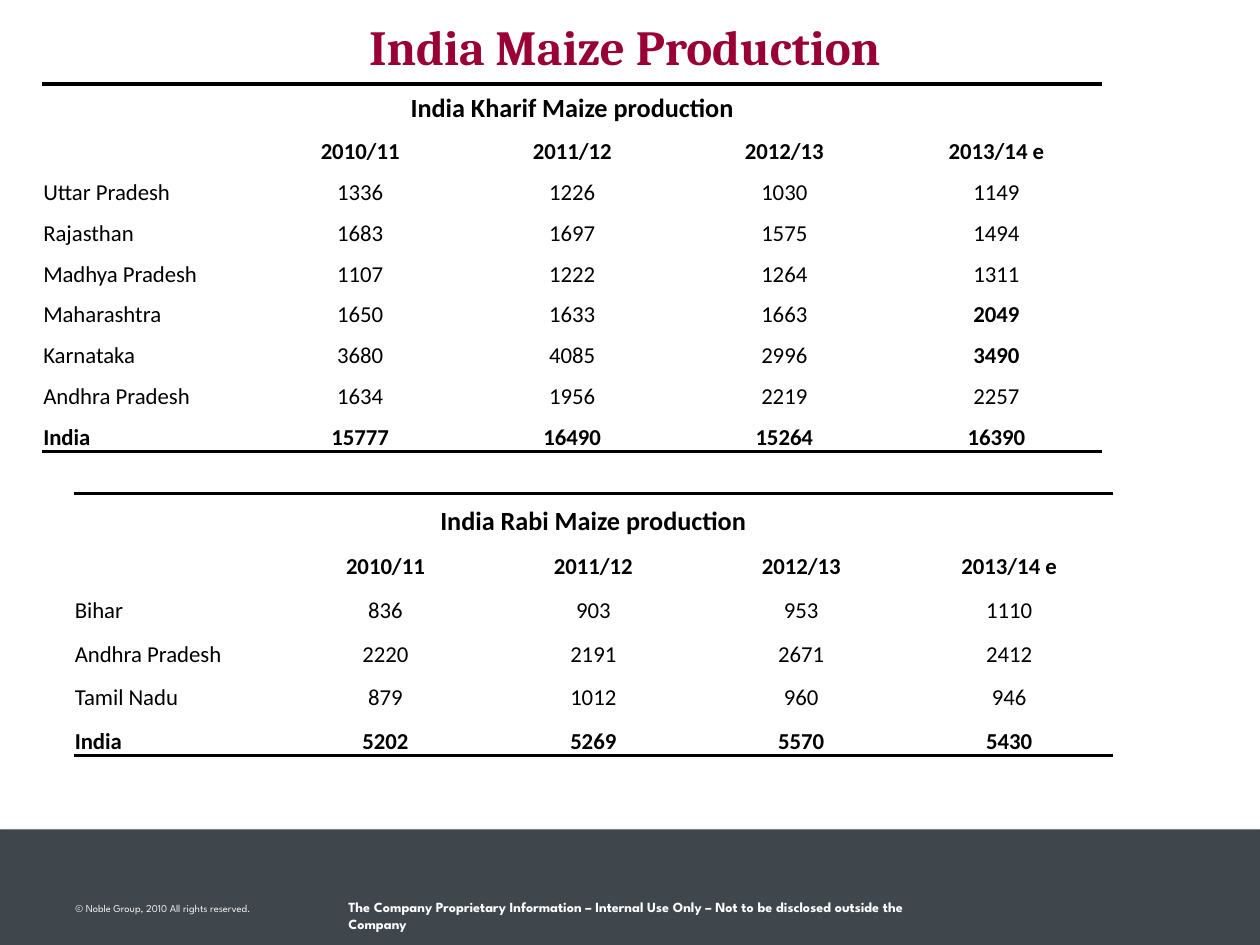
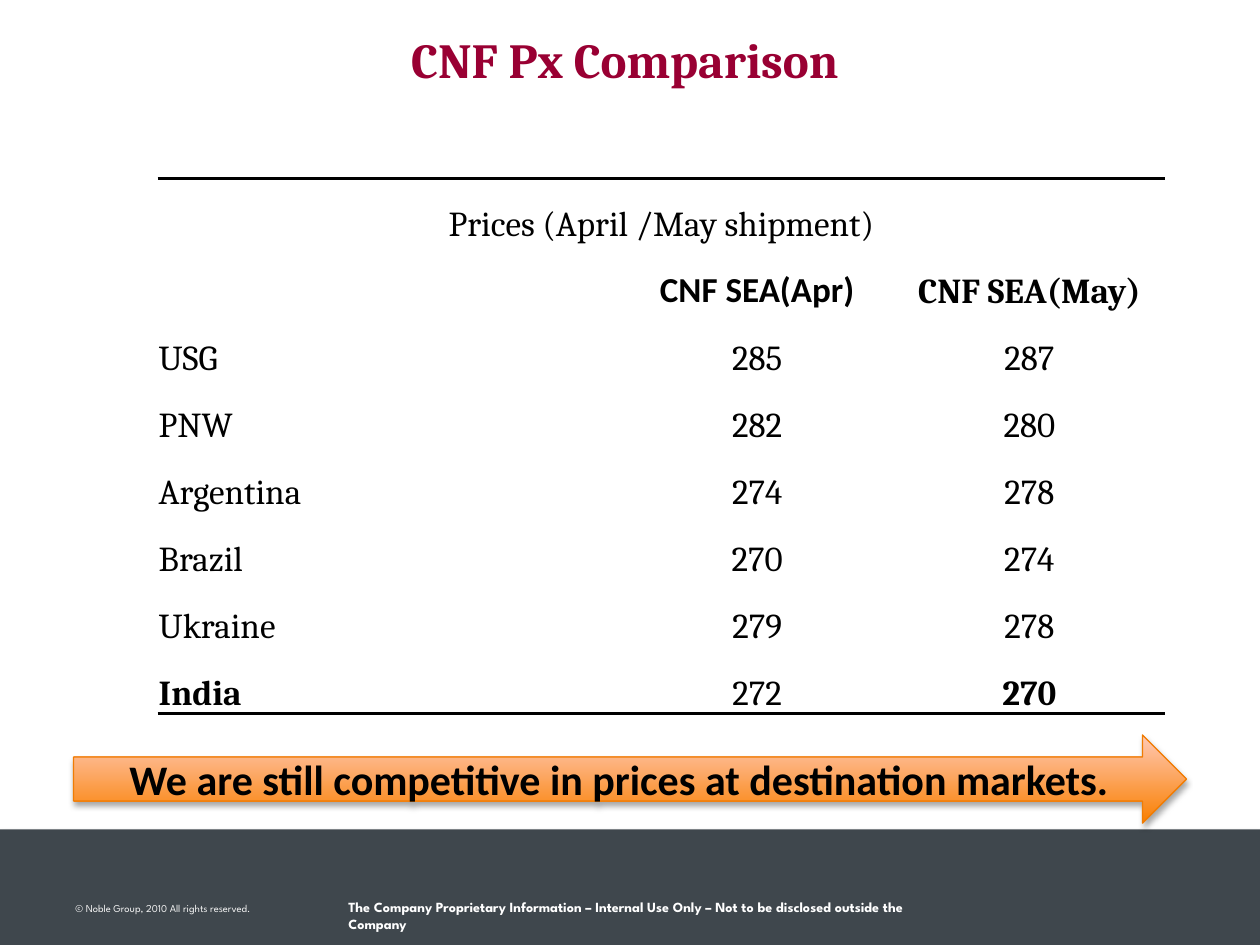
from dataclasses import dataclass

from lxml import etree
from pptx import Presentation
from pptx import util as u
from pptx.dml.color import RGBColor
from pptx.enum import shapes, text
from pptx.oxml import ns

COLUMNS, ROWS = 120, 90  # grid that all places and sizes refer to
BLACK, WHITE, SLATE, PALE = "000000", "FFFFFF", "3F474D", "F2F2F2"
CRIMSON, ORANGE, DEEP_ORANGE, PEACH = "990033", "F07C03", "F97F00", "FFC9B5"
BODY, SERIF, FOOTER = "Calibri", "Cambria", "League Spartan"
NO_STYLE = "{2D5ABB26-0587-4C30-8999-92F81FD0307C}"
LEFT, CENTER = text.PP_ALIGN.LEFT, text.PP_ALIGN.CENTER
TOP, MIDDLE, BOTTOM = (text.MSO_ANCHOR.TOP, text.MSO_ANCHOR.MIDDLE,
                       text.MSO_ANCHOR.BOTTOM)

prs = Presentation()
prs.slide_width, prs.slide_height = u.Inches(10), u.Inches(7.5)


@dataclass(frozen=True)
class Box:
    """A place on the grid: left, top, width and height."""
    x: float
    y: float
    w: float
    h: float

    def emu(self) -> tuple[int, ...]:
        col, row = prs.slide_width / COLUMNS, prs.slide_height / ROWS
        return (round(self.x * col), round(self.y * row),
                round(self.w * col), round(self.h * row))


@dataclass(frozen=True)
class DataTable:
    """A captioned table; bold holds (row, column) places in rows."""
    box: Box
    caption: str
    rows: list[tuple[str, ...]]
    bold: set[tuple[int, int]]
    shares: tuple[float, ...] = (0.2,) * 5
    caption_size: int = 15
    size: int = 13
    font: str = BODY
    caption_bold: bool = True
    other_fonts: tuple[tuple[tuple[int, int], str], ...] = ()


def rgb(hex_code: str) -> RGBColor:
    return RGBColor.from_string(hex_code)


def put_text(tf, content: str, *, size: float, font: str = BODY,
             color: str = BLACK, bold: bool = False, align=LEFT) -> None:
    p = tf.paragraphs[0]
    p.alignment = align
    r = p.add_run()
    r.text = content
    r.font.size, r.font.name, r.font.bold = u.Pt(size), font, bold
    r.font.color.rgb = rgb(color)


def add_label(s, box: Box, content: str, anchor=TOP, **style) -> None:
    tf = s.shapes.add_textbox(*box.emu()).text_frame
    tf.word_wrap = True
    tf.auto_size = text.MSO_AUTO_SIZE.SHAPE_TO_FIT_TEXT
    tf.vertical_anchor = anchor
    put_text(tf, content, **style)


def add_shadowed(s, kind, box: Box):
    """Add a preset shape with the soft shadow that falls straight down."""
    sp = s.shapes.add_shape(kind, *box.emu())
    sp.shadow.inherit = False
    effects = sp._element.spPr.find(ns.qn("a:effectLst"))
    shadow = etree.SubElement(
        effects, ns.qn("a:outerShdw"), blurRad=str(u.Pt(3.1)),
        dist=str(u.Pt(1.8)), dir="5400000", rotWithShape="0")
    color = etree.SubElement(shadow, ns.qn("a:srgbClr"), val=BLACK)
    etree.SubElement(color, ns.qn("a:alpha"), val="35000")
    return sp


def add_rule(cell, side: str) -> None:
    """Draw a black 2 pt border; side is lnT or lnB."""
    ln = etree.Element(ns.qn(f"a:{side}"), w=str(u.Pt(2)))
    fill = etree.SubElement(ln, ns.qn("a:solidFill"))
    etree.SubElement(fill, ns.qn("a:srgbClr"), val=BLACK)
    cell._tc.get_or_add_tcPr().insert(0, ln)


def add_data_table(s, data: DataTable) -> None:
    n_rows, n_cols = len(data.rows) + 1, len(data.shares)
    left, top, width, height = data.box.emu()
    table = s.shapes.add_table(n_rows, n_cols, left, top, width, height).table
    table.first_row = table.horz_banding = False
    table._tbl.tblPr.find(ns.qn("a:tableStyleId")).text = NO_STYLE
    for column, share in zip(table.columns, data.shares):
        column.width = round(width * share)
    for row in table.rows:
        row.height = round(height / n_rows)
    for cell in table.iter_cells():
        cell.fill.solid()
        cell.fill.fore_color.rgb = rgb(WHITE)
        cell.vertical_anchor = BOTTOM
        cell.margin_left = cell.margin_right = cell.margin_top = u.Inches(0.01)
        cell.margin_bottom = 0
    for c in range(n_cols):
        add_rule(table.cell(0, c), "lnT")
        add_rule(table.cell(n_rows - 1, c), "lnB")

    caption = table.cell(0, 0)
    caption.merge(table.cell(0, n_cols - 1))
    put_text(caption.text_frame, data.caption, size=data.caption_size,
             font=data.font, bold=data.caption_bold, align=CENTER)
    fonts = dict(data.other_fonts)
    for r, values in enumerate(data.rows):
        for c, value in enumerate(values):
            if value:
                put_text(table.cell(r + 1, c).text_frame, value,
                         size=data.size, font=fonts.get((r, c), data.font),
                         bold=r == 0 or (r, c) in data.bold,
                         align=CENTER if c else LEFT)


def add_slide(title: str, title_top: float):
    """Add a slide with the footer band, its two notices and a title."""
    s = prs.slides.add_slide(prs.slide_layouts[6])
    band = add_shadowed(s, shapes.MSO_SHAPE.RECTANGLE, Box(0, 79, 120, 11))
    band.fill.solid()
    band.fill.fore_color.rgb = rgb(SLATE)
    band.line.fill.background()
    add_label(s, Box(6, 85.3, 48, 2.4),
              "© Noble Group, 2010 All rights reserved.", BOTTOM,
              size=6, font=FOOTER, color=PALE)
    add_label(s, Box(32, 85, 60, 4.4),
              "The Company Proprietary Information – Internal Use Only – "
              "Not to be disclosed outside the Company",
              size=8, font=FOOTER, color=WHITE, bold=True)
    add_label(s, Box(3, title_top, 113, 6.8), title, size=28, font=SERIF,
              color=CRIMSON, bold=True, align=CENTER)
    return s


def add_conclusion_arrow(s, box: Box, content: str) -> None:
    arrow = add_shadowed(s, shapes.MSO_SHAPE.RIGHT_ARROW, box)
    arrow.fill.gradient()
    arrow.fill.gradient_angle = 90
    stops = zip(arrow.fill.gradient_stops, (0, 1), (DEEP_ORANGE, PEACH))
    for stop, position, color in stops:
        stop.position = position
        stop.color.rgb = rgb(color)
    arrow.line.color.rgb = rgb(ORANGE)
    arrow.line.width = u.Pt(0.75)
    tf = arrow.text_frame
    tf.word_wrap = True
    tf.vertical_anchor = MIDDLE
    put_text(tf, content, size=24, bold=True, align=CENTER)


SEASONS = ("", "2010/11", "2011/12", "2012/13", "2013/14 e")

KHARIF = DataTable(
    Box(4, 8, 101, 35), "India Kharif Maize production",
    [SEASONS,
     ("Uttar Pradesh", "1336", "1226", "1030", "1149"),
     ("Rajasthan", "1683", "1697", "1575", "1494"),
     ("Madhya Pradesh", "1107", "1222", "1264", "1311"),
     ("Maharashtra", "1650", "1633", "1663", "2049"),
     ("Karnataka", "3680", "4085", "2996", "3490"),
     ("Andhra Pradesh", "1634", "1956", "2219", "2257"),
     ("India", "15777", "16490", "15264", "16390")],
    bold={(4, 4), (5, 4)} | {(7, c) for c in range(5)})

RABI = DataTable(
    Box(7, 47, 99, 25), "India Rabi Maize production",
    [SEASONS,
     ("Bihar", "836", "903", "953", "1110"),
     ("Andhra Pradesh", "2220", "2191", "2671", "2412"),
     ("Tamil Nadu", "879", "1012", "960", "946"),
     ("India", "5202", "5269", "5570", "5430")],
    bold={(4, c) for c in range(5)})

PRICES = DataTable(
    Box(15, 17, 96, 51), "Prices (April /May shipment)",
    [("", "CNF SEA(Apr)", "CNF SEA(May)"),
     ("USG", "285", "287"),
     ("PNW", "282", "280"),
     ("Argentina", "274", "278"),
     ("Brazil", "270", "274"),
     ("Ukraine", "279", "278"),
     ("India", "272", "270")],
    bold={(6, 0), (6, 2)}, shares=(0.46, 0.27, 0.27),
    caption_size=20, size=20, font=SERIF, caption_bold=False,
    other_fonts=(((0, 1), BODY),))


def main() -> None:
    production = add_slide("India Maize Production", 1)
    add_data_table(production, KHARIF)
    add_data_table(production, RABI)

    comparison = add_slide("CNF Px Comparison", 2.2)
    add_data_table(comparison, PRICES)
    add_conclusion_arrow(
        comparison, Box(7, 70, 106, 8.4),
        "We are still competitive in prices at destination markets.")
    prs.save("out.pptx")


if __name__ == "__main__":
    main()
